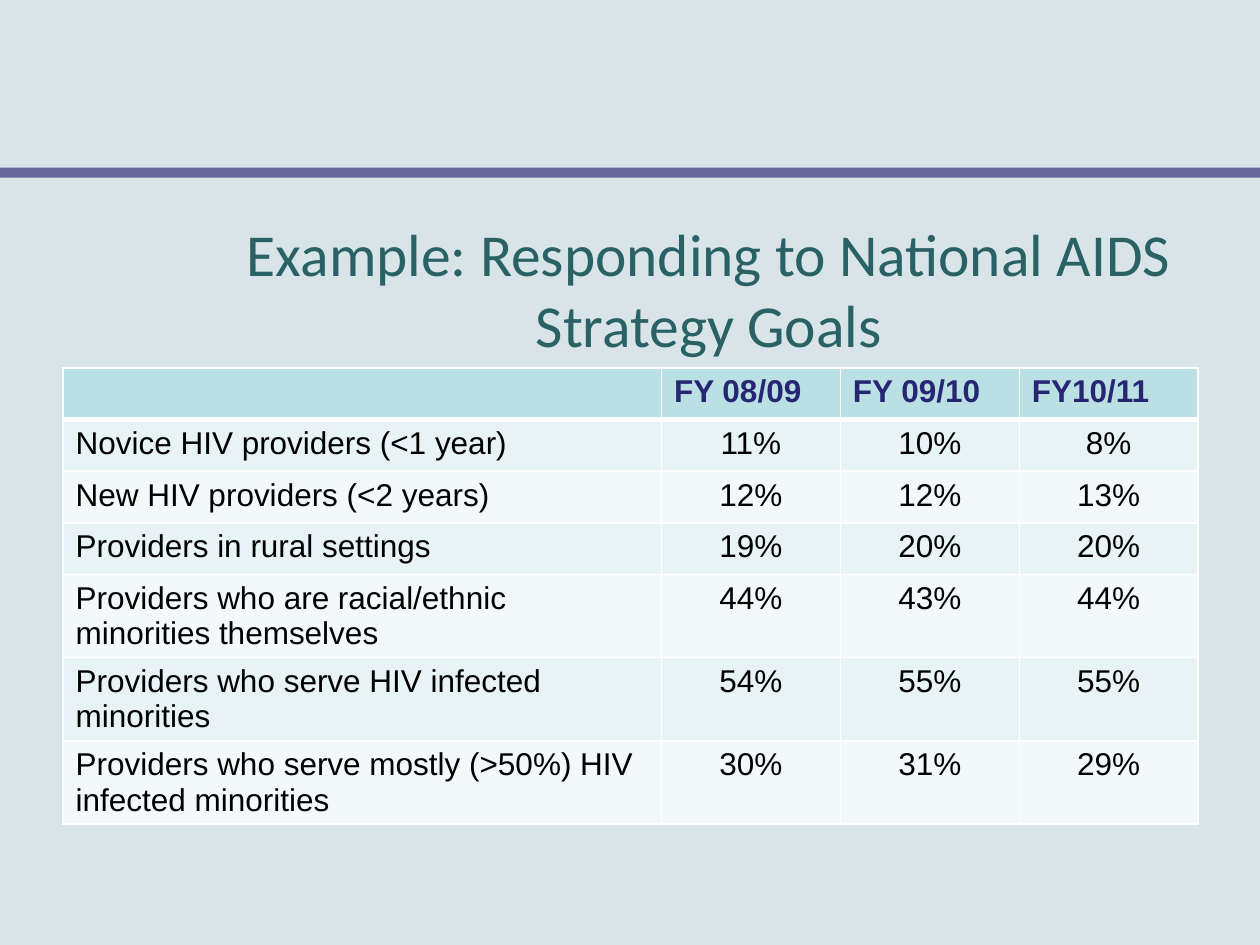
from dataclasses import dataclass

from lxml.etree import SubElement
from pptx import Presentation
from pptx.dml.color import RGBColor as Rgb
from pptx.enum.shapes import MSO_SHAPE as Preset
from pptx.enum.text import MSO_ANCHOR as Anchor, PP_ALIGN as Align
from pptx.oxml.ns import qn
from pptx.slide import Slide
from pptx.table import _Cell as Cell
from pptx.util import Inches, Pt


@dataclass(frozen=True)
class Theme:
    background: str = "D8E4E8"
    rule: str = "666699"
    title: str = "296165"
    header_fill: str = "BBE0E3"
    header_text: str = "262673"
    body_text: str = "000000"
    band_fills: tuple[str, str] = ("E7F3F4", "F3F9FA")
    border: str = "FFFFFF"
    title_font: str = "Calibri"
    table_font: str = "Arial"
    title_size: int = 34
    table_size: int = 18
    thin_border: int = 1
    thick_border: int = 3


@dataclass(frozen=True)
class GoalRow:
    label: str
    values: tuple[str, str, str]
    height: float = 0.41


THEME = Theme()
TWO_LINE_HEIGHT = 0.66
COLUMN_WIDTHS = (4.75, 1.42, 1.42, 1.42)
ROWS = (
    GoalRow("", ("FY 08/09", "FY 09/10", "FY10/11")),
    GoalRow("Novice HIV providers (<1 year)", ("11%", "10%", "8%")),
    GoalRow("New HIV providers (<2 years)", ("12%", "12%", "13%")),
    GoalRow("Providers in rural settings", ("19%", "20%", "20%")),
    GoalRow("Providers who are racial/ethnic minorities themselves",
            ("44%", "43%", "44%"), TWO_LINE_HEIGHT),
    GoalRow("Providers who serve HIV infected minorities",
            ("54%", "55%", "55%"), TWO_LINE_HEIGHT),
    GoalRow("Providers who serve mostly (>50%) HIV infected minorities",
            ("30%", "31%", "29%"), TWO_LINE_HEIGHT),
)


def add_rule(slide: Slide) -> None:
    shape = slide.shapes.add_shape(
        Preset.RECTANGLE, 0, Inches(1.33), Inches(10), Inches(0.08))
    shape.shadow.inherit = False
    shape.fill.solid()
    shape.fill.fore_color.rgb = Rgb.from_string(THEME.rule)
    shape.line.fill.background()


def fill_title(slide: Slide, text: str) -> None:
    title = slide.shapes.title
    title.left, title.top = Inches(1.25), Inches(1.67)
    title.width, title.height = Inches(8.75), Inches(1)
    frame = title.text_frame
    frame.text = text
    frame.word_wrap = True
    frame.vertical_anchor = Anchor.TOP
    paragraph = frame.paragraphs[0]
    paragraph.alignment = Align.CENTER
    font = paragraph.runs[0].font
    font.name, font.size = THEME.title_font, Pt(THEME.title_size)
    font.color.rgb = Rgb.from_string(THEME.title)


def set_borders(cell: Cell, top: int, bottom: int) -> None:
    """Border lines must come before the fill in the cell properties."""
    properties = cell._tc.get_or_add_tcPr()
    widths = {"lnL": THEME.thin_border, "lnR": THEME.thin_border,
              "lnT": top, "lnB": bottom}
    for position, (side, width) in enumerate(widths.items()):
        line = SubElement(properties, qn(f"a:{side}"), w=str(Pt(width)))
        fill = SubElement(line, qn("a:solidFill"))
        SubElement(fill, qn("a:srgbClr"), val=THEME.border)
        properties.insert(position, line)


def format_cell(cell: Cell, text: str, row: int, column: int) -> None:
    is_header = row == 0
    fill = THEME.header_fill if is_header else THEME.band_fills[(row - 1) % 2]
    cell.fill.solid()
    cell.fill.fore_color.rgb = Rgb.from_string(fill)
    set_borders(cell,
                top=THEME.thick_border if row == 1 else THEME.thin_border,
                bottom=THEME.thick_border if is_header else THEME.thin_border)
    cell.text_frame.text = text
    paragraph = cell.text_frame.paragraphs[0]
    if column and not is_header:
        paragraph.alignment = Align.CENTER
    for run in paragraph.runs:
        font = run.font
        font.name, font.size = THEME.table_font, Pt(THEME.table_size)
        font.bold = is_header
        font.color.rgb = Rgb.from_string(
            THEME.header_text if is_header else THEME.body_text)


def add_goal_table(slide: Slide) -> None:
    height = sum(row.height for row in ROWS)
    table = slide.shapes.add_table(
        len(ROWS), len(COLUMN_WIDTHS), Inches(0.5), Inches(2.92),
        Inches(sum(COLUMN_WIDTHS)), Inches(height)).table
    for column, width in zip(table.columns, COLUMN_WIDTHS):
        column.width = Inches(width)
    for row_index, goal in enumerate(ROWS):
        table.rows[row_index].height = Inches(goal.height)
        for column_index, text in enumerate((goal.label, *goal.values)):
            format_cell(table.cell(row_index, column_index), text,
                        row_index, column_index)


def main() -> None:
    presentation = Presentation()
    presentation.slide_width, presentation.slide_height = Inches(10), Inches(7.5)
    title_only = presentation.slide_layouts[5]
    slide = presentation.slides.add_slide(title_only)

    # Background and rule
    slide.background.fill.solid()
    slide.background.fill.fore_color.rgb = Rgb.from_string(THEME.background)
    add_rule(slide)

    # Title and table
    fill_title(slide, "Example: Responding to National AIDS Strategy Goals")
    add_goal_table(slide)
    presentation.save("out.pptx")


if __name__ == "__main__":
    main()
